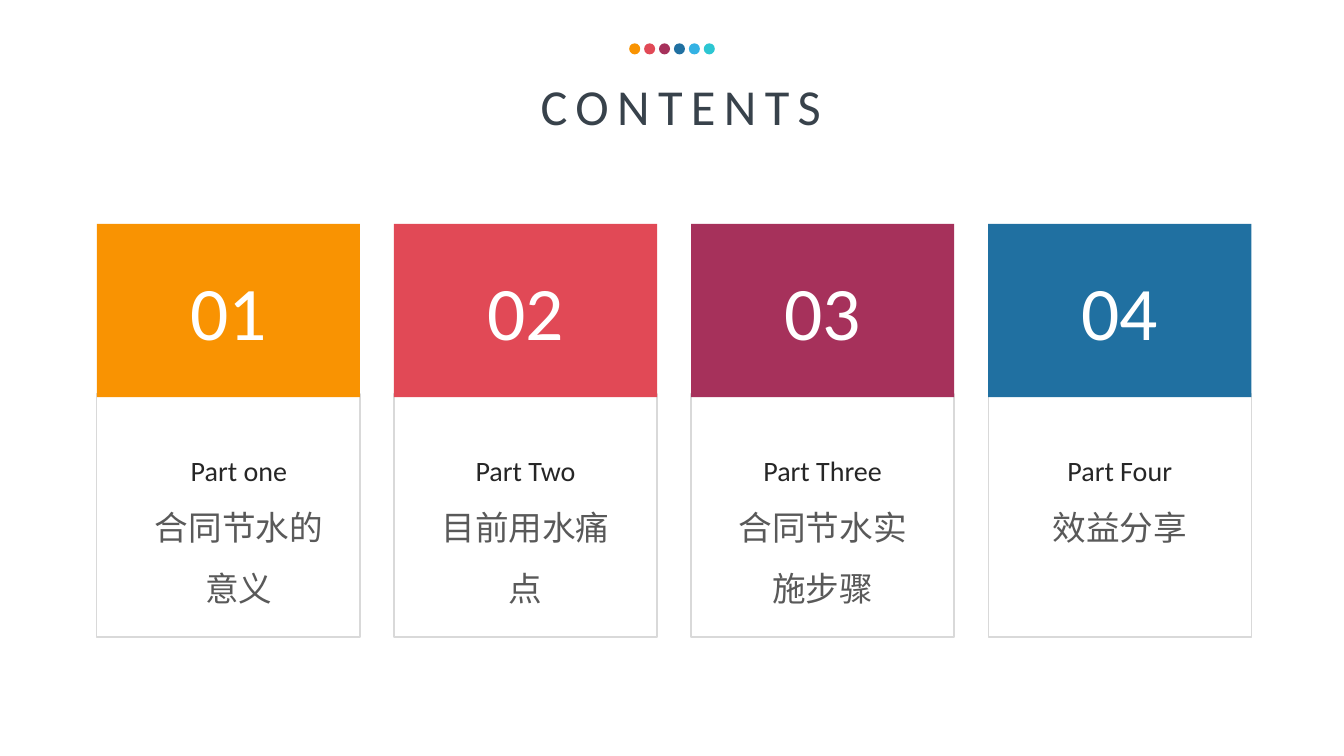
from dataclasses import dataclass

from lxml.etree import _Element as Element
from pptx import Presentation
from pptx.dml.color import RGBColor
from pptx.enum.shapes import MSO_SHAPE as Preset
from pptx.enum.text import MSO_ANCHOR as Anchor, MSO_AUTO_SIZE as AutoSize, PP_ALIGN as Align
from pptx.shapes.autoshape import Shape
from pptx.slide import Slide
from pptx.text.text import TextFrame, _Paragraph as Paragraph, _Run as Run
from pptx.util import Inches, Pt

FONT = "Calibri"
COLORS = {
    "orange": "F99302",
    "red": "E14956",
    "plum": "A6315B",
    "blue": "2070A1",
    "sky": "34B2E4",
    "teal": "2CC6D2",
    "title": "38424B",
    "label": "262626",
    "topic": "595959",
    "border": "D9D9D9",
    "white": "FFFFFF",
}
DOT_COLORS = ("orange", "red", "plum", "blue", "sky", "teal")
DOT_LEFT, DOT_TOP, DOT_SIZE, DOT_STEP = 6.24, 0.43, 0.11, 0.148
CARD_LEFT, CARD_WIDTH, CARD_STEP = 0.96, 2.61, 2.947
HEADER_TOP, HEADER_HEIGHT = 2.22, 1.72
FRAME_TOP, FRAME_HEIGHT = 3.91, 2.41
TEXT_INSET, TEXT_TOP = 0.21, 4.45


@dataclass(frozen=True)
class Card:
    number: str
    label: str
    topic: tuple[str, ...]
    color: str
    text_width: float = 2.19
    text_height: float = 1.65


CARDS = (
    Card("01", "Part one", ("合同节水的", "意义"), "orange", text_width=2.4),
    Card("02", "Part Two", ("目前用水痛点",), "red"),
    Card("03", "Part Three", ("合同节水实施步骤",), "plum"),
    Card("04", "Part Four", ("效益分享",), "blue", text_height=1.04),
)


def rgb(name: str) -> RGBColor:
    return RGBColor.from_string(COLORS[name])


def add_span(para: Paragraph, text: str, size: float, color: str) -> Run:
    para.alignment = Align.CENTER
    span = para.add_run()
    span.text = text
    span.font.name = FONT
    span.font.size = Pt(size)
    span.font.color.rgb = rgb(color)
    return span


def fill_shape(shape: Shape, color: str) -> None:
    shape.shadow.inherit = False
    shape.fill.solid()
    shape.fill.fore_color.rgb = rgb(color)
    shape.line.fill.background()


def add_title(page: Slide) -> None:
    title = page.shapes.title
    title.left, title.top = Inches(5.02), Inches(0.69)
    title.width, title.height = Inches(3.27), Inches(0.71)
    frame: TextFrame = title.text_frame
    frame.word_wrap = False
    frame.auto_size = AutoSize.NONE
    frame.vertical_anchor = Anchor.TOP
    span = add_span(frame.paragraphs[0], " CONTENTS", 36, "title")
    properties: Element = span.font._element
    properties.set("spc", "600")


def add_dots(page: Slide) -> None:
    group = page.shapes.add_group_shape()
    for index, color in enumerate(DOT_COLORS):
        dot = group.shapes.add_shape(
            Preset.OVAL, Inches(DOT_LEFT + index * DOT_STEP), Inches(DOT_TOP),
            Inches(DOT_SIZE), Inches(DOT_SIZE))
        fill_shape(dot, color)


def add_card(page: Slide, card: Card, left: float) -> None:
    border = page.shapes.add_shape(
        Preset.RECTANGLE, Inches(left), Inches(FRAME_TOP),
        Inches(CARD_WIDTH), Inches(FRAME_HEIGHT))
    border.shadow.inherit = False
    border.fill.background()
    border.line.color.rgb = rgb("border")
    border.line.width = Pt(1)

    box = page.shapes.add_textbox(
        Inches(left + TEXT_INSET), Inches(TEXT_TOP),
        Inches(card.text_width), Inches(card.text_height))
    frame = box.text_frame
    frame.word_wrap = True
    add_span(frame.paragraphs[0], card.label, 20, "label")
    for line in card.topic:
        para = frame.add_paragraph()
        para.line_spacing = 1.5
        add_span(para, line, 24, "topic")

    header = page.shapes.add_shape(
        Preset.RECTANGLE, Inches(left), Inches(HEADER_TOP),
        Inches(CARD_WIDTH), Inches(HEADER_HEIGHT))
    fill_shape(header, card.color)
    header.text_frame.vertical_anchor = Anchor.MIDDLE
    add_span(header.text_frame.paragraphs[0], card.number, 54, "white")


def main() -> None:
    deck = Presentation()
    deck.slide_width, deck.slide_height = Inches(13.33), Inches(7.5)
    page = deck.slides.add_slide(deck.slide_layouts.get_by_name("Title Only"))
    page.background.fill.solid()
    page.background.fill.fore_color.rgb = rgb("white")
    add_title(page)
    for index, card in enumerate(CARDS):
        add_card(page, card, CARD_LEFT + index * CARD_STEP)
    add_dots(page)
    deck.save("out.pptx")


if __name__ == "__main__":
    main()
